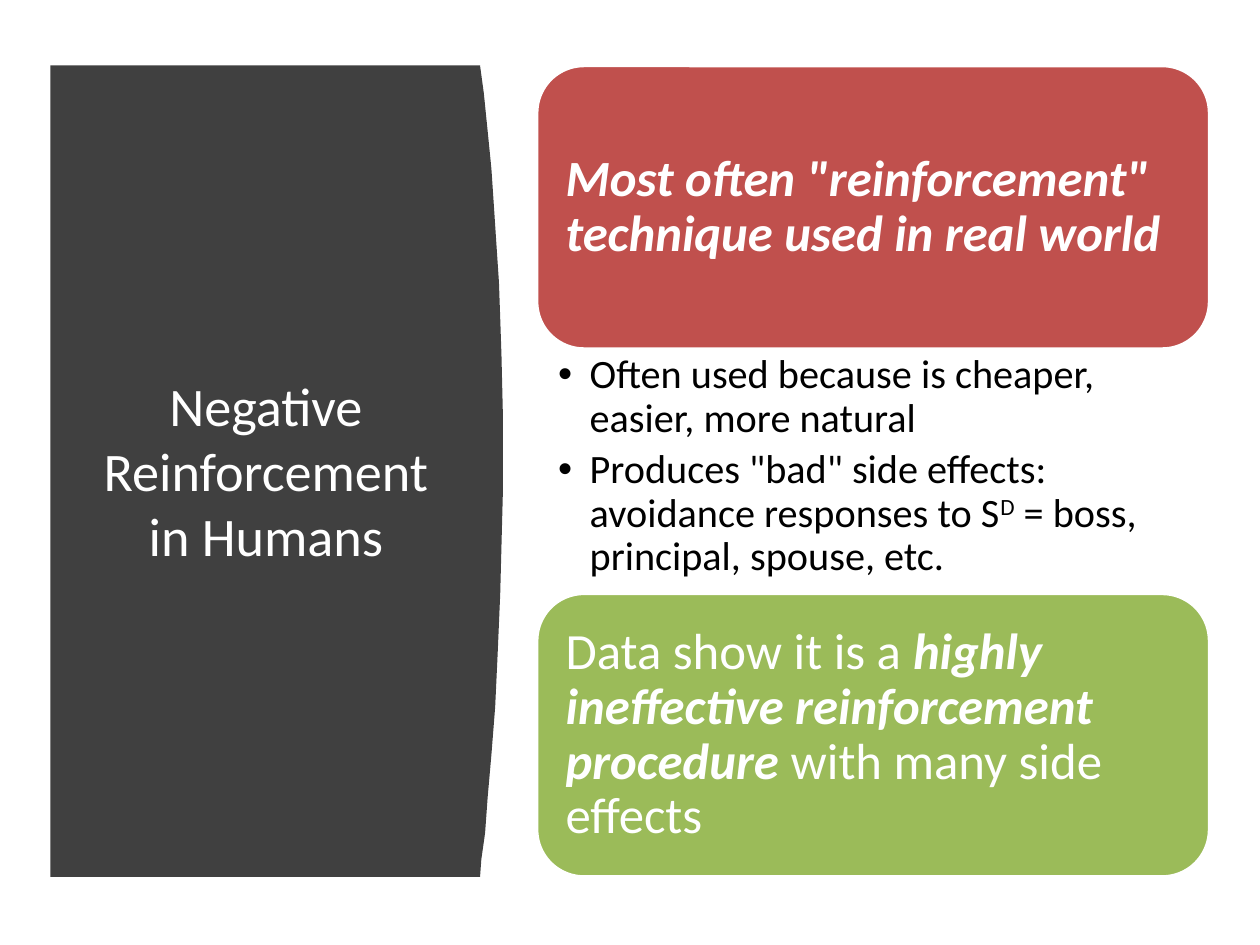
import dataclasses

import pptx
import pptx.dml.color
import pptx.enum.shapes
import pptx.enum.text
import pptx.oxml
import pptx.oxml.ns
import pptx.util

Inches = pptx.util.Inches
Pt = pptx.util.Pt


@dataclasses.dataclass(frozen=True)
class Theme:
    font: str = "Calibri"
    panel: str = "404040"
    warning: str = "C0504D"
    evidence: str = "9BBB59"
    light: str = "FFFFFF"
    dark: str = "000000"
    title_size: int = 31
    card_size: int = 29
    list_size: int = 23


THEME = Theme()
PLAIN, STRONG, RAISED = "plain", "strong", "raised"
PANEL_LEFT, PANEL_TOP, PANEL_BOTTOM = 0.4, 0.52, 6.96
CURVE = [
    (3.81, 0.52), (3.84, 0.74), (3.87, 1.04), (3.9, 1.34), (3.92, 1.64),
    (3.94, 1.94), (3.96, 2.24), (3.97, 2.53), (3.98, 2.82), (3.99, 3.25),
    (3.99, 3.94), (3.98, 4.33), (3.97, 4.71), (3.95, 5.18), (3.93, 5.61),
    (3.9, 5.99), (3.87, 6.33), (3.85, 6.61), (3.82, 6.82), (3.81, 6.96),
]
COLUMN_LEFT, COLUMN_WIDTH = 4.26, 5.34
CARD_HEIGHT, LIST_HEIGHT = 2.25, 1.94
CARD_INSETS = (0.12, 0.12, 0.12, 0.12)
LIST_INSETS = (0.17, 0.04, 0.23, 0.04)


def rgb(value):
    return pptx.dml.color.RGBColor.from_string(value)


def place(box, left, top, width, height):
    box.left, box.top = Inches(left), Inches(top)
    box.width, box.height = Inches(width), Inches(height)


def set_frame(frame, anchor, insets):
    frame.word_wrap = True
    frame.auto_size = pptx.enum.text.MSO_AUTO_SIZE.NONE
    frame.vertical_anchor = anchor
    frame.margin_left, frame.margin_top, frame.margin_right, frame.margin_bottom = map(Inches, insets)


def format_span(span, size, color, style=PLAIN):
    span.font.name = THEME.font
    span.font.size = Pt(size)
    span.font.color.rgb = rgb(color)
    span.font.bold = span.font.italic = style == STRONG
    if style == RAISED:
        span._r.get_or_add_rPr().set("baseline", "30000")


def fill_para(para, parts, size, color):
    para.alignment = pptx.enum.text.PP_ALIGN.LEFT
    para.line_spacing = 0.9
    para.space_before = Pt(0)
    for text, style in parts:
        span = para.add_run()
        span.text = text
        format_span(span, size, color, style)


def set_bullet(para):
    properties = para._p.get_or_add_pPr()
    properties.set("marL", str(Inches(0.25)))
    properties.set("indent", str(Inches(-0.25)))
    for tag, name, value in (("a:buFont", "typeface", "Arial"), ("a:buChar", "char", "•")):
        bullet = pptx.oxml.parse_xml(f"<{tag} {pptx.oxml.ns.nsdecls('a')}/>")
        bullet.set(name, value)
        properties.append(bullet)


def add_panel(page):
    builder = page.shapes.build_freeform(Inches(PANEL_LEFT), Inches(PANEL_TOP))
    outline = CURVE + [(PANEL_LEFT, PANEL_BOTTOM)]
    builder.add_line_segments([(Inches(x), Inches(y)) for x, y in outline], close=True)
    panel = builder.convert_to_shape()
    panel.shadow.inherit = False
    panel.fill.solid()
    panel.fill.fore_color.rgb = rgb(THEME.panel)
    panel.line.fill.background()
    page.shapes._spTree.insert(2, panel._element)


def add_title(page, text):
    title = page.shapes.title
    place(title, 0.71, 1.11, 2.8, 5.24)
    title.text_frame.text = text
    set_frame(title.text_frame, pptx.enum.text.MSO_ANCHOR.MIDDLE, (0.1, 0.05, 0.1, 0.05))
    para = title.text_frame.paragraphs[0]
    para.alignment = pptx.enum.text.PP_ALIGN.CENTER
    format_span(para.runs[0], THEME.title_size, THEME.light)


def add_card(page, top, color, parts):
    card = page.shapes.add_shape(
        pptx.enum.shapes.MSO_SHAPE.ROUNDED_RECTANGLE,
        Inches(COLUMN_LEFT), Inches(top), Inches(COLUMN_WIDTH), Inches(CARD_HEIGHT),
    )
    card.shadow.inherit = False
    card.fill.solid()
    card.fill.fore_color.rgb = rgb(color)
    card.line.color.rgb = rgb(THEME.light)
    card.line.width = Pt(2)
    set_frame(card.text_frame, pptx.enum.text.MSO_ANCHOR.MIDDLE, CARD_INSETS)
    fill_para(card.text_frame.paragraphs[0], parts, THEME.card_size, THEME.light)


def add_list(page, top, items):
    body = page.placeholders[1]
    place(body, COLUMN_LEFT, top, COLUMN_WIDTH, LIST_HEIGHT)
    frame = body.text_frame
    set_frame(frame, pptx.enum.text.MSO_ANCHOR.TOP, LIST_INSETS)
    for index, parts in enumerate(items):
        para = frame.add_paragraph() if index else frame.paragraphs[0]
        para.level = 1
        fill_para(para, parts, THEME.list_size, THEME.dark)
        para.space_after = Pt(4.6)
        set_bullet(para)


def main():
    deck = pptx.Presentation()
    deck.slide_width, deck.slide_height = Inches(10), Inches(7.5)
    page = deck.slides.add_slide(deck.slide_layouts[1])
    list_top = PANEL_TOP + CARD_HEIGHT

    add_panel(page)
    add_title(page, "Negative Reinforcement in Humans")
    add_card(page, PANEL_TOP, THEME.warning, [
        ('Most often "reinforcement" technique used in real world', STRONG),
    ])
    add_list(page, list_top, [
        [("Often used because is cheaper, easier, more natural", PLAIN)],
        [
            ('Produces "bad" side effects: avoidance responses to S', PLAIN),
            ("D", RAISED),
            (" = boss, principal, spouse, etc.", PLAIN),
        ],
    ])
    add_card(page, list_top + LIST_HEIGHT, THEME.evidence, [
        ("Data show it is a ", PLAIN),
        ("highly ineffective reinforcement procedure ", STRONG),
        ("with many side effects", PLAIN),
    ])
    deck.save("out.pptx")


if __name__ == "__main__":
    main()
